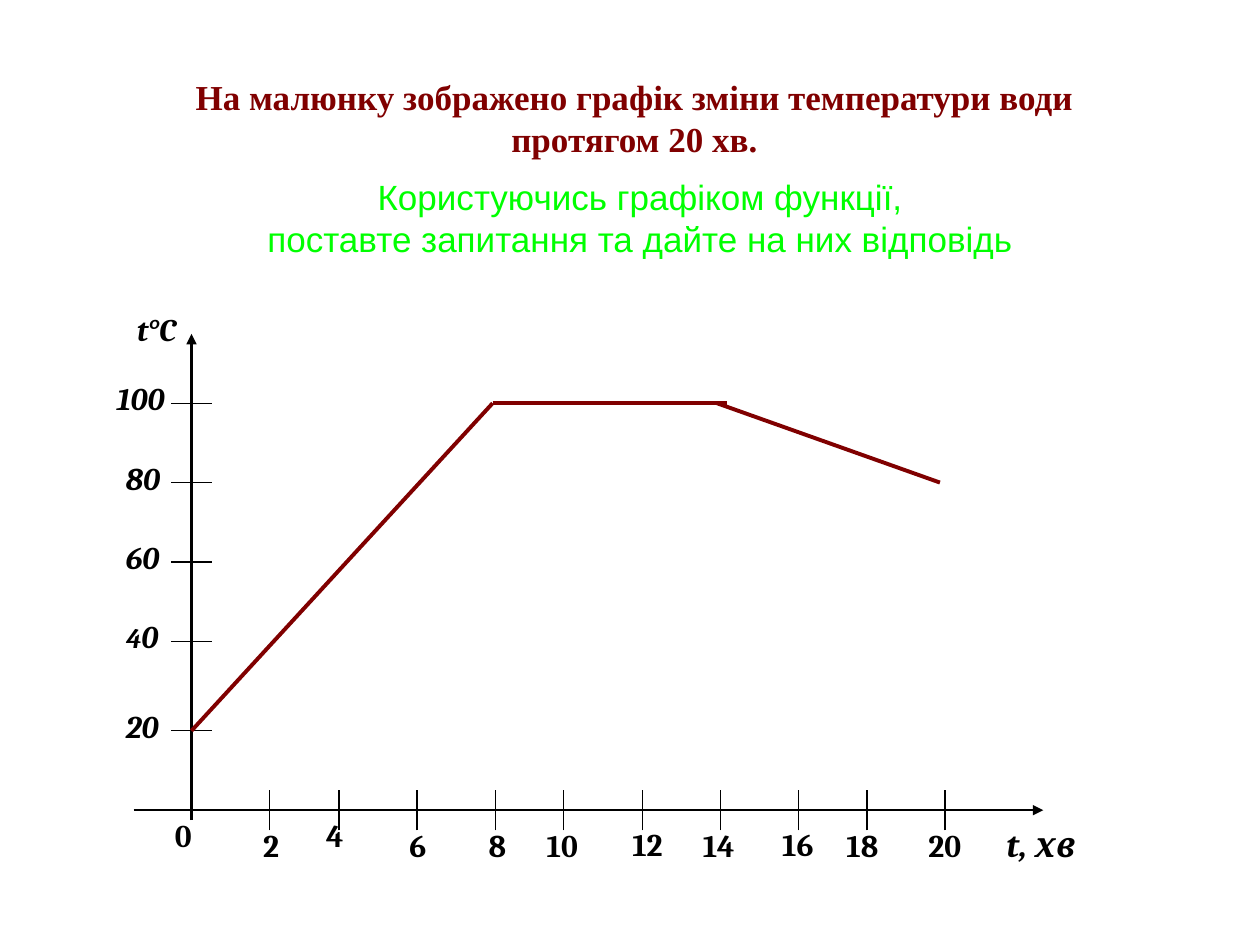
from pptx import Presentation
from pptx.dml.color import RGBColor
from pptx.enum.shapes import MSO_CONNECTOR
from pptx.enum.text import PP_ALIGN
from pptx.oxml.ns import qn
from pptx.util import Inches, Pt
from lxml import etree

STRAIGHT = MSO_CONNECTOR.STRAIGHT
LEFT, CENTER = PP_ALIGN.LEFT, PP_ALIGN.CENTER
BLACK, MAROON, GREEN = "000000", "800000", "00FF00"

TITLE = ["На малюнку зображено графік зміни температури води протягом 20 хв."]
TASK = ["Користуючись графіком функції,",
        "поставте запитання та дайте на них відповідь"]

# Axes: start and end point
TIME_AXIS = ((1.06, 6.43), (8.28, 6.43))
TEMPERATURE_AXIS = ((1.52, 6.51), (1.52, 2.65))
TICK = 0.16  # half length

# Temperature: runs of (text, size), tick y, label left
TEMPERATURES = [
    ([("20", 18)], 5.80, 0.90),
    ([("4", 16), ("0", 18)], 5.09, 0.90),
    ([("60", 18)], 4.46, 0.90),
    ([("80", 18)], 3.83, 0.90),
    ([("100", 18)], 3.20, 0.83),
]
# Time: minutes, tick x, label left, label top
TIMES = [
    ("2", 2.14, 1.99, 6.51), ("4", 2.69, 2.49, 6.43),
    ("6", 3.31, 3.15, 6.51), ("8", 3.93, 3.78, 6.51),
    ("10", 4.47, 4.24, 6.51), ("12", 5.10, 4.92, 6.50),
    ("14", 5.72, 5.48, 6.51), ("16", 6.34, 6.11, 6.50),
    ("18", 6.88, 6.62, 6.51), ("20", 7.50, 7.27, 6.51),
]
# Heating, boiling, cooling
STAGES = [
    ((1.52, 5.80), (3.91, 3.20)),
    ((3.91, 3.20), (5.77, 3.20)),
    ((5.69, 3.20), (7.46, 3.83)),
]


def rgb(color):
    return RGBColor.from_string(color)


def add_line(shapes, start, end, color=BLACK, width=0.75, arrow=False):
    line = shapes.add_connector(STRAIGHT, *map(Inches, start + end))
    line.line.color.rgb = rgb(color)
    line.line.width = Pt(width)
    if arrow:
        etree.SubElement(line.line._get_or_add_ln(), qn("a:tailEnd"), type="triangle")
    etree.SubElement(line._element.spPr, qn("a:effectLst"))


def add_text(shapes, box, paragraphs, font, color, bold=False, italic=False,
             align=LEFT, wrap=True):
    """Each paragraph is a list of (text, size) runs."""
    frame = shapes.add_textbox(*map(Inches, box)).text_frame
    frame.word_wrap = wrap
    for index, runs in enumerate(paragraphs):
        paragraph = frame.add_paragraph() if index else frame.paragraphs[0]
        paragraph.alignment = align
        for text, size in runs:
            run = paragraph.add_run()
            run.text = text
            run.font.name = font
            run.font.size = Pt(size)
            run.font.bold = bold
            run.font.italic = italic
            run.font.color.rgb = rgb(color)


def add_label(shapes, left, top, runs, italic=False, width=0.77):
    add_text(shapes, (left, top, width, 0.4), [runs], "Cambria", BLACK,
             bold=True, italic=italic)


def add_graph(shapes):
    add_line(shapes, *TIME_AXIS, width=1.5, arrow=True)
    add_line(shapes, *TEMPERATURE_AXIS, width=1.5, arrow=True)
    axis_x, axis_y = TEMPERATURE_AXIS[0][0], TIME_AXIS[0][1]

    for runs, y, left in TEMPERATURES:
        add_line(shapes, (axis_x - TICK, y), (axis_x + TICK, y))
        add_label(shapes, left, y - 0.24, runs, italic=True)
    for minutes, x, left, top in TIMES:
        add_line(shapes, (x, axis_y + TICK), (x, axis_y - TICK))
        add_label(shapes, left, top, [(minutes, 18)], width=0.53)

    add_label(shapes, 1.29, 6.43, [("0", 18)], width=0.35)
    add_label(shapes, 0.99, 2.41, [("t°C", 18)], italic=True)
    add_label(shapes, 7.89, 6.48, [("t, хв", 20)], italic=True, width=0.85)

    for start, end in STAGES:
        add_line(shapes, start, end, MAROON, 2.25)


def main():
    presentation = Presentation()
    presentation.slide_width = Inches(10)
    presentation.slide_height = Inches(7.5)
    slide = presentation.slides.add_slide(presentation.slide_layouts[6])

    add_graph(slide.shapes.add_group_shape().shapes)
    add_text(slide.shapes, (1.06, 0.55, 7.95, 0.55), [[(line, 20)] for line in TITLE],
             "Times New Roman", MAROON, bold=True, align=CENTER, wrap=False)
    add_text(slide.shapes, (1.14, 1.34, 7.88, 0.67), [[(line, 20)] for line in TASK],
             "Arial", GREEN, align=CENTER, wrap=False)
    presentation.save("out.pptx")


if __name__ == "__main__":
    main()
